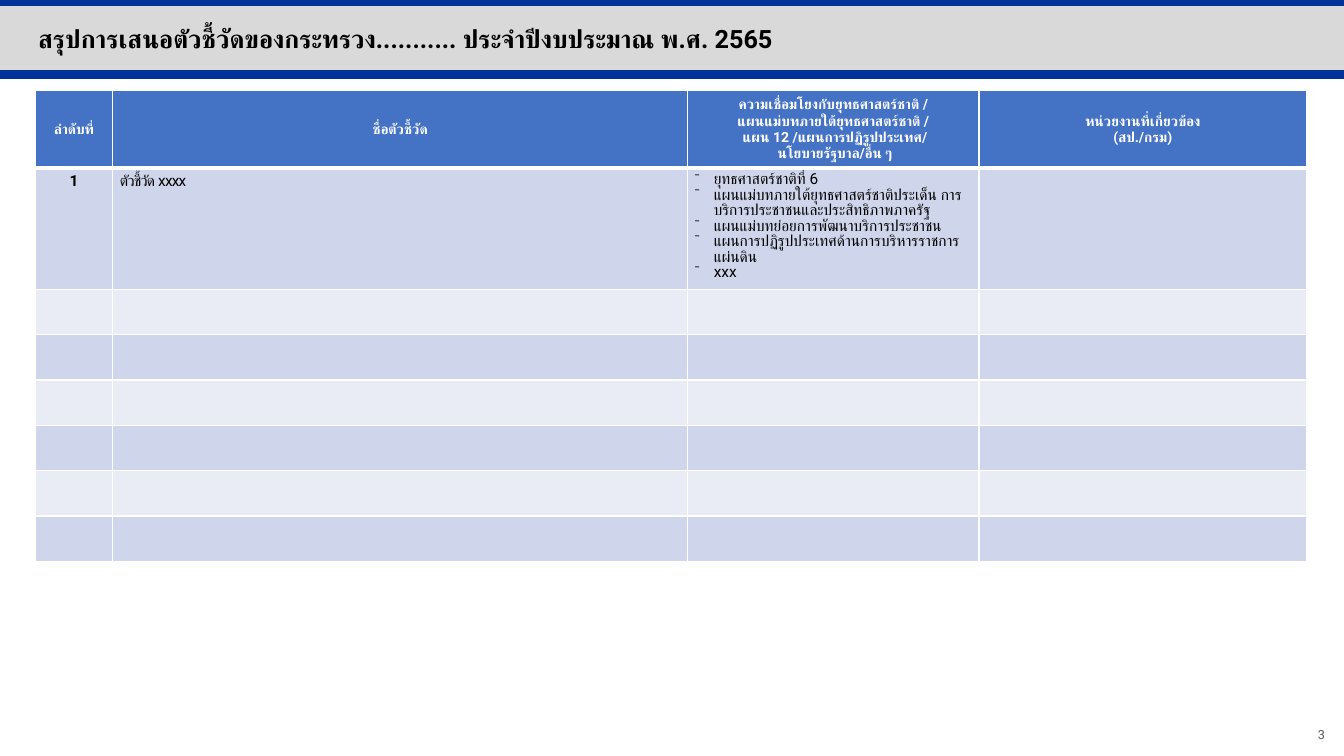
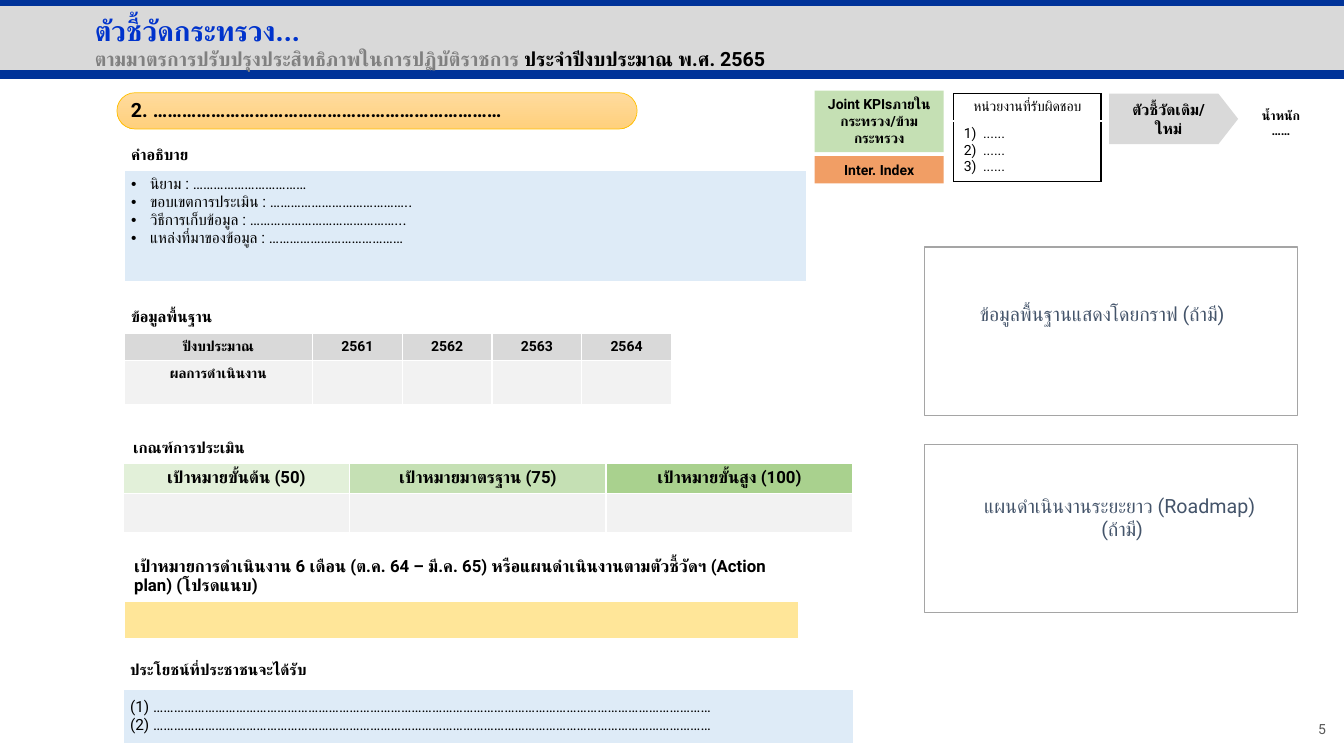
from itertools import product

from lxml import etree
from pptx import Presentation
from pptx.dml.color import RGBColor
from pptx.enum import shapes, text
from pptx.oxml.ns import qn
from pptx.util import Inches, Pt

FONT = "Roboto"
BLACK, WHITE, GREY, PALE = "000000", "FFFFFF", "D9D9D9", "F2F2F2"
NAVY, BLUE, SKY, SLATE = "003399", "4472C4", "DEEBF7", "44546A"
BANDS = ("CFD5EA", "E9EBF5")
LEFT, MID, RIGHT = text.PP_ALIGN.LEFT, text.PP_ALIGN.CENTER, text.PP_ALIGN.RIGHT
TOP, CENTER = text.MSO_ANCHOR.TOP, text.MSO_ANCHOR.MIDDLE
KIND = shapes.MSO_SHAPE


def rgb(code):
    return RGBColor.from_string(code)


def box(at):
    return [Inches(n) for n in at]


def sub(node, tag, **attrs):
    return etree.SubElement(node, qn(tag), attrs)


class Deck:
    def __init__(self):
        self.prs = Presentation()
        self.prs.slide_width, self.prs.slide_height = Inches(13.33), Inches(7.5)
        self.slide = None

    def page(self, at, title, num, num_at, num_size):
        """Start a slide with its header band, title and page number."""
        self.slide = self.prs.slides.add_slide(self.prs.slide_layouts[5])
        self.shape((0, 0.05, 13.33, 0.68), GREY)
        for y in (0.74, 0.02):
            self.line(y)
        head = self.slide.shapes.title
        self.slide.shapes._spTree.append(head._element)
        head.left, head.top, head.width, head.height = box(at)
        self.put(head.text_frame, title, size=18, bold=True)
        self.label(num_at, num, size=num_size, color="595959", align=RIGHT, anchor=CENTER)

    def line(self, y):
        bar = self.slide.shapes.add_connector(
            shapes.MSO_CONNECTOR.STRAIGHT, *box((0, y, 13.33, y)))
        bar.line.color.rgb, bar.line.width = rgb(NAVY), Pt(6)
        sub(bar._element.spPr, "a:effectLst")

    def run(self, para, words, size, color, bold, spc):
        for i, part in enumerate(words.split("\n")):
            if i:
                para.add_line_break()
            if not part:
                continue
            run = para.add_run()
            run.text = part
            font = run.font
            font.name, font.size, font.bold = FONT, Pt(size), bold
            font.color.rgb = rgb(color)
            props = run._r.get_or_add_rPr()
            if spc:
                props.set("spc", str(spc))
            for tag in ("a:ea", "a:cs"):
                sub(props, tag, typeface=FONT)

    def put(self, frame, paras, size=11, color=BLACK, bold=False, align=LEFT,
            anchor=TOP, bullet=None, gap=None, spc=0):
        """Fill a frame; a paragraph is a string or a list of (words, size, colour)."""
        frame.word_wrap = True
        frame.vertical_anchor = anchor
        if isinstance(paras, str):
            paras = [paras]
        for i, runs in enumerate(paras):
            para = frame.add_paragraph() if i else frame.paragraphs[0]
            para.alignment = align
            para.space_before = Pt(0)
            if gap:
                para.line_spacing = gap
            if bullet:
                self.mark(para, bullet)
            if isinstance(runs, str):
                runs = [(runs, size, color)]
            for words, pts, tint in runs:
                self.run(para, words, pts, tint, bold, spc)

    def mark(self, para, bullet):
        """Hang a paragraph on a bullet sign, or on a number when it is '1)'."""
        props = para._p.get_or_add_pPr()
        indent = Inches(0.19)
        props.set("marL", str(indent))
        props.set("indent", str(-indent))
        if bullet == "1)":
            sub(props, "a:buFont", typeface=FONT)
            sub(props, "a:buAutoNum", type="arabicParenR")
        else:
            sub(props, "a:buFont", typeface="Arial")
            sub(props, "a:buChar", char=bullet)

    def label(self, at, words, **style):
        self.put(self.slide.shapes.add_textbox(*box(at)).text_frame, words, **style)

    def shape(self, at, fill, words="", kind=KIND.RECTANGLE, adj=None, edge=None, **style):
        item = self.slide.shapes.add_shape(kind, *box(at))
        item.shadow.inherit = False
        if adj is not None:
            item.adjustments[0] = adj
        if isinstance(fill, str):
            item.fill.solid()
            item.fill.fore_color.rgb = rgb(fill)
        else:
            item.fill.gradient()
            item.fill.gradient_angle = 270
            for stop, code in zip(item.fill.gradient_stops, fill):
                stop.color.rgb = rgb(code)
        if edge:
            item.line.color.rgb, item.line.width = rgb(edge[0]), Pt(edge[1])
        else:
            item.line.fill.background()
        if words:
            self.put(item.text_frame, words, **style)

    def grid(self, x, y, cols, rows, pad=(0.07, 0.05), edge=WHITE, head=1):
        """Add a table of blank white cells; head is the rule under its first row."""
        at = box((x, y, sum(cols), sum(rows)))
        table = self.slide.shapes.add_table(len(rows), len(cols), *at).table
        table.first_row = table.horz_banding = False
        for col, n in zip(table.columns, cols):
            col.width = Inches(n)
        for row, n in zip(table.rows, rows):
            row.height = Inches(n)
        for r, c in product(range(len(rows)), range(len(cols))):
            cell = table.cell(r, c)
            cell.margin_left = cell.margin_right = Inches(pad[0])
            cell.margin_top = cell.margin_bottom = Inches(pad[1])
            for side in "LRB" if r else "LRTB":
                wide = head if side == "B" and not r else 1
                rule = sub(cell._tc.get_or_add_tcPr(), "a:ln" + side, w=str(Pt(wide)))
                sub(sub(rule, "a:solidFill"), "a:srgbClr", val=edge)
            self.paint(cell, WHITE)
            sub(cell.text_frame.paragraphs[0]._p, "a:endParaRPr", sz="800")
        return table

    def paint(self, cell, fill):
        cell.fill.solid()
        cell.fill.fore_color.rgb = rgb(fill)

    def cell(self, table, r, c, words, fill=WHITE, anchor=TOP, **style):
        cell = table.cell(r, c)
        self.paint(cell, fill)
        if words:
            self.put(cell.text_frame, words, **style)
        cell.vertical_anchor = anchor


def summary(deck):
    deck.page((0.28, 0.18, 11.27, 0.4),
              "สรุปการเสนอตัวชี้วัดของกระทรวง........... ประจำปีงบประมาณ พ.ศ. 2565",
              "3", (10.24, 7.09, 3, 0.4), 9)
    table = deck.grid(0.35, 0.9, (0.77, 5.7, 2.89, 3.25), [0.77, 1.2] + [0.45] * 6,
                      pad=(0.07, 0.04), head=3)
    heads = (
        "ลำดับที่",
        "ชื่อตัวชี้วัด",
        "ความเชื่อมโยงกับยุทธศาสตร์ชาติ /\nแผนแม่บทภายใต้ยุทธศาสตร์ชาติ /\n"
        " แผน 12 /แผนการปฏิรูปประเทศ/\n นโยบายรัฐบาล/อื่น ๆ",
        "หน่วยงานที่เกี่ยวข้อง\n(สป./กรม)",
    )
    for c, words in enumerate(heads):
        deck.cell(table, 0, c, words, BLUE, size=10, color=WHITE, bold=True,
                  align=MID, anchor=CENTER)
        for r in range(1, 8):
            deck.paint(table.cell(r, c), BANDS[(r - 1) % 2])
    deck.cell(table, 1, 0, "1", BANDS[0], bold=True, align=MID)
    deck.cell(table, 1, 1, "ตัวชี้วัด xxxx", BANDS[0], spc=-60)
    deck.cell(table, 1, 2, [
        "ยุทธศาสตร์ชาติที่ 6",
        "แผนแม่บทภายใต้ยุทธศาสตร์ชาติประเด็น การบริการประชาชนและประสิทธิภาพภาครัฐ",
        "แผนแม่บทย่อยการพัฒนาบริการประชาชน",
        "แผนการปฏิรูปประเทศด้านการบริหารราชการแผ่นดิน",
        "xxx",
    ], BANDS[0], bullet="⁻", gap=0.86)


def badges(deck):
    """Draw the row of labels at the top right."""
    bold = dict(bold=True, align=MID)
    deck.shape((11, 0.93, 1.28, 0.5), GREY, "ตัวชี้วัดเดิม/ใหม่", KIND.PENTAGON, 0.39,
               anchor=CENTER, **bold)
    deck.label((12.1, 1.02, 1.21, 0.4), "น้ำหนัก\n……", size=9, **bold)
    deck.shape((8.08, 0.9, 1.28, 0.61), "C5E0B4", "Joint KPIsภายในกระทรวง/ข้ามกระทรวง",
               size=10, **bold)
    deck.shape((8.08, 1.55, 1.28, 0.27), "F19E65", "Inter. Index", size=10,
               anchor=CENTER, **bold)
    unit = deck.grid(9.46, 0.93, [1.46], (0.27, 0.6), pad=(0.1, 0.05), edge=BLACK)
    deck.cell(unit, 0, 0, "หน่วยงานที่รับผิดชอบ", size=10, align=MID)
    deck.cell(unit, 1, 0, ["......"] * 3, size=10, bullet="1)")


def detail(deck):
    title = [
        [("ตัวชี้วัดกระทรวง...", 20, "0033CC")],
        [("ตามมาตรการปรับปรุงประสิทธิภาพในการปฏิบัติราชการ ", 14, "808080"),
         ("ประจำปีงบประมาณ พ.ศ. 2565", 14, BLACK)],
    ]
    deck.page((0.84, 0.08, 8.43, 0.67), title, "5", (11, 7.03, 2.25, 0.4), 10)

    deck.shape((1.16, 0.92, 5.16, 0.36), ("FFDB9E", "FFD07C"),
               kind=KIND.ROUNDED_RECTANGLE, adj=0.5, edge=("FFC000", 0.5))
    deck.label((1.2, 0.92, 6.89, 0.34), "2. ………………………………………………………………", size=14, bold=True)

    about = deck.grid(1.23, 1.4, [6.77], (0.29, 1.1))
    deck.cell(about, 0, 0, "คำอธิบาย", bold=True)
    deck.cell(about, 1, 0, [
        "นิยาม : ……………………………",
        "ขอบเขตการประเมิน : …………………………………..",
        "วิธีการเก็บข้อมูล : ……………………………………...",
        "แหล่งที่มาของข้อมูล : …………………………………",
    ], SKY, bullet="•")

    base = deck.grid(1.23, 3.01, [1.87] + [0.89] * 4, (0.3, 0.27, 0.43))
    base.cell(0, 0).merge(base.cell(0, 2))
    deck.cell(base, 0, 0, "ข้อมูลพื้นฐาน", bold=True)
    for c, words in enumerate(("ปีงบประมาณ", "2561", "2562", "2563", "2564")):
        deck.cell(base, 1, c, words, GREY, size=10, bold=True, align=MID)
        deck.cell(base, 2, c, "" if c else "ผลการดำเนินงาน", PALE, size=10, bold=True, align=MID)

    goal = deck.grid(1.22, 4.31, (2.25, 2.54, 2.45), (0.28, 0.3, 0.39))
    goal.cell(0, 0).merge(goal.cell(0, 2))
    goal.cell(0, 0).margin_left = Inches(0.1)
    deck.cell(goal, 0, 0, "เกณฑ์การประเมิน", bold=True)
    levels = (("เป้าหมายขั้นต้น (50)", "E2F0D9"), ("เป้าหมายมาตรฐาน (75)", "C5E0B4"),
              ("เป้าหมายขั้นสูง (100)", "A9D18E"))
    for c, (words, fill) in enumerate(levels):
        deck.cell(goal, 1, c, words, fill, size=12, bold=True, align=MID)
        deck.paint(goal.cell(2, c), PALE)

    plan = deck.grid(1.23, 5.47, [6.69], (0.5, 0.37), pad=(0.1, 0.05))
    deck.cell(plan, 0, 0, "เป้าหมายการดำเนินงาน 6 เดือน (ต.ค. 64 – มี.ค. 65) "
              "หรือแผนดำเนินงานตามตัวชี้วัดฯ (Action plan) (โปรดแนบ)", size=12, bold=True)
    deck.paint(plan.cell(1, 0), "FFE699")

    gain = deck.grid(1.22, 6.47, [7.25], (0.36, 0.55), head=3)
    deck.cell(gain, 0, 0, "ประโยชน์ที่ประชาชนจะได้รับ", bold=True, anchor=CENTER)
    dots = "………………………………………………………………………………………………………………………………………………"
    deck.cell(gain, 1, 0, [f"({n}) {dots}" for n in (1, 2)], SKY, anchor=CENTER)

    badges(deck)
    panels = (
        (2.45, (9.62, 2.95, 3.02, 0.34), LEFT, "ข้อมูลพื้นฐานแสดงโดยกราฟ (ถ้ามี)"),
        (4.41, (9.51, 4.85, 3.24, 0.57), MID, ["แผนดำเนินงานระยะยาว (Roadmap) ", "(ถ้ามี)"]),
    )
    for y, at, align, words in panels:
        deck.shape((9.17, y, 3.7, 1.67), WHITE, edge=("A5A5A5", 1))
        deck.label(at, words, size=14, color=SLATE, align=align)


def main():
    deck = Deck()
    summary(deck)
    detail(deck)
    deck.prs.save("out.pptx")


if __name__ == "__main__":
    main()
